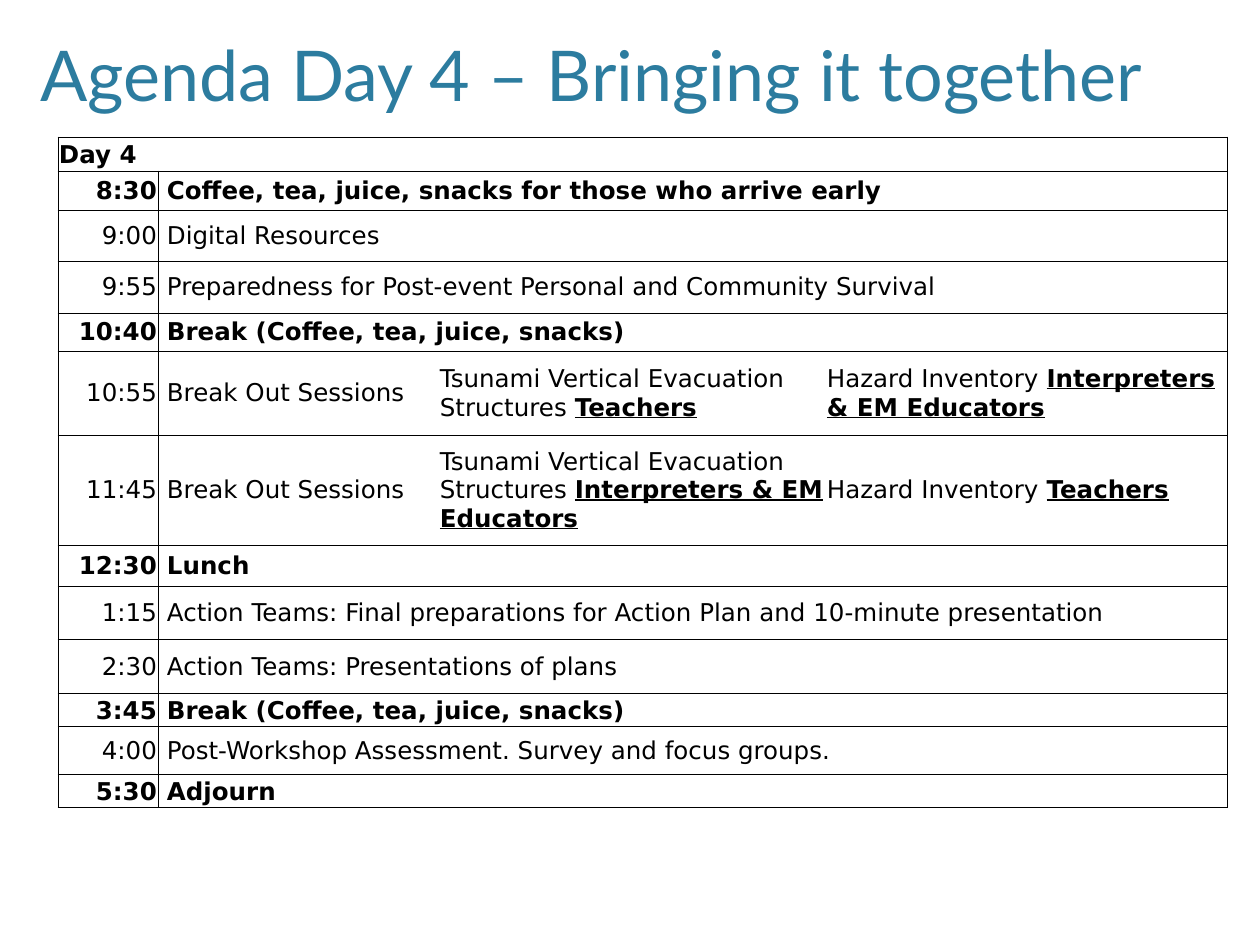
"""Build the Day 4 workshop agenda slide."""
import dataclasses
import typing

import lxml.etree
import pptx
import pptx.dml.color
import pptx.enum.text
import pptx.oxml.ns
import pptx.presentation
import pptx.slide
import pptx.table
import pptx.util

PX_PER_INCH = 126
COLORS = {"title": "2C7C9F", "text": "000000", "border": "000000"}
TITLE_FONT = "Lato"
TABLE_FONT = "DejaVu Sans"
COLUMN_WIDTHS = (100, 281, 387, 402)
INDENT = 8
SIDES = "LRTB"
ALIGN = pptx.enum.text.PP_ALIGN


@dataclasses.dataclass(frozen=True)
class Session:
    """A part of a breakout row: a topic and its underlined audience."""
    topic: str
    audience: str


@dataclasses.dataclass(frozen=True)
class AgendaRow:
    """One agenda line with its height in px."""
    height: int
    time: str
    activity: str
    bold: bool = False
    sessions: tuple[Session, ...] = ()


EVACUATION = "Tsunami Vertical Evacuation Structures "
INVENTORY = "Hazard Inventory "
TEACHERS = "Teachers"
EDUCATORS = "Interpreters & EM Educators"
BREAKOUT = "Break Out Sessions"
BREAK = "Break (Coffee, tea, juice, snacks)"
HEADER_HEIGHT = 34
AGENDA = (
    AgendaRow(39, "8:30", "Coffee, tea, juice, snacks for those who arrive early", True),
    AgendaRow(51, "9:00", "Digital Resources"),
    AgendaRow(52, "9:55", "Preparedness for Post-event Personal and Community Survival"),
    AgendaRow(38, "10:40", BREAK, True),
    AgendaRow(84, "10:55", BREAKOUT, sessions=(
        Session(EVACUATION, TEACHERS), Session(INVENTORY, EDUCATORS))),
    AgendaRow(110, "11:45", BREAKOUT, sessions=(
        Session(EVACUATION, EDUCATORS), Session(INVENTORY, TEACHERS))),
    AgendaRow(41, "12:30", "Lunch", True),
    AgendaRow(54, "1:15", "Action Teams: Final preparations for Action Plan and 10-minute presentation"),
    AgendaRow(54, "2:30", "Action Teams: Presentations of plans"),
    AgendaRow(33, "3:45", BREAK, True),
    AgendaRow(48, "4:00", "Post-Workshop Assessment. Survey and focus groups."),
    AgendaRow(33, "5:30", "Adjourn", True),
)


def px(length: int) -> pptx.util.Emu:
    """Turn px into EMU."""
    return pptx.util.Emu(round(length * 914400 / PX_PER_INCH))


def color(name: str) -> pptx.dml.color.RGBColor:
    """Look up a named colour."""
    return pptx.dml.color.RGBColor.from_string(COLORS[name])


def add_title(slide: pptx.slide.Slide, text: str) -> None:
    """Place and format the title placeholder."""
    title = slide.shapes.title
    title.left, title.top, title.width, title.height = map(px, (28, 15, 1213, 107))
    frame = title.text_frame
    frame.text = text
    frame.auto_size = pptx.enum.text.MSO_AUTO_SIZE.NONE
    frame.vertical_anchor = pptx.enum.text.MSO_ANCHOR.BOTTOM
    paragraph = frame.paragraphs[0]
    paragraph.alignment = ALIGN.LEFT
    font = paragraph.runs[0].font
    font.name, font.size = TITLE_FONT, pptx.util.Pt(40)
    font.color.rgb = color("title")


def style_cell(cell: pptx.table._Cell, visible_sides: str) -> None:
    """Set the borders, fill, margins and anchor of a cell."""
    properties = cell._tc.get_or_add_tcPr()
    qn = pptx.oxml.ns.qn
    for side in SIDES:
        line = lxml.etree.SubElement(properties, qn(f"a:ln{side}"), w=str(pptx.util.Pt(0.5)))
        if side in visible_sides:
            fill = lxml.etree.SubElement(line, qn("a:solidFill"))
            lxml.etree.SubElement(fill, qn("a:srgbClr"), val=COLORS["border"])
        else:
            lxml.etree.SubElement(line, qn("a:noFill"))
    cell.fill.background()
    cell.margin_left = cell.margin_right = cell.margin_top = px(1)
    cell.margin_bottom = 0
    cell.vertical_anchor = pptx.enum.text.MSO_ANCHOR.MIDDLE


def write_cell(cell: pptx.table._Cell, text: str, bold: bool = False, underlined: str = "",
               alignment: typing.Any = ALIGN.LEFT, indent: int = 0) -> None:
    """Write text into a cell, with an optional bold underlined ending."""
    paragraph = cell.text_frame.paragraphs[0]
    paragraph.text = text
    paragraph.alignment = alignment
    if indent:
        paragraph._p.get_or_add_pPr().set("marL", str(px(indent)))
    if underlined:
        paragraph.add_run().text = underlined
    for index, run in enumerate(paragraph.runs):
        run.font.name, run.font.size = TABLE_FONT, pptx.util.Pt(14)
        run.font.color.rgb = color("text")
        run.font.bold = bold or index > 0
        run.font.underline = index > 0


def add_agenda(slide: pptx.slide.Slide) -> None:
    """Draw the agenda table."""
    heights = [HEADER_HEIGHT, *(row.height for row in AGENDA)]
    table = slide.shapes.add_table(
        len(heights), len(COLUMN_WIDTHS), px(58), px(137),
        px(sum(COLUMN_WIDTHS)), px(sum(heights))).table
    table.first_row = table.horz_banding = False
    for column, width in zip(table.columns, COLUMN_WIDTHS):
        column.width = px(width)
    for table_row, height in zip(table.rows, heights):
        table_row.height = px(height)

    last = len(COLUMN_WIDTHS) - 1
    for cell in table.rows[0].cells:
        style_cell(cell, SIDES)
    table.cell(0, 0).merge(table.cell(0, last))
    write_cell(table.cell(0, 0), "Day 4", bold=True)

    for index, row in enumerate(AGENDA, start=1):
        sides = (SIDES, "LTB", "TB", "RTB") if row.sessions else (SIDES,) * (last + 1)
        for cell, visible_sides in zip(table.rows[index].cells, sides):
            style_cell(cell, visible_sides)
        write_cell(table.cell(index, 0), row.time, row.bold, alignment=ALIGN.RIGHT)
        write_cell(table.cell(index, 1), row.activity, row.bold, indent=INDENT)
        for column, session in enumerate(row.sessions, start=2):
            write_cell(table.cell(index, column), session.topic, underlined=session.audience)
        if not row.sessions:
            table.cell(index, 1).merge(table.cell(index, last))


def main() -> None:
    """Create and save the presentation."""
    presentation = pptx.Presentation()
    presentation.slide_width, presentation.slide_height = px(1260), px(945)
    slide = presentation.slides.add_slide(presentation.slide_layouts[5])
    add_title(slide, "Agenda Day 4 – Bringing it together")
    add_agenda(slide)
    presentation.save("out.pptx")


if __name__ == "__main__":
    main()
